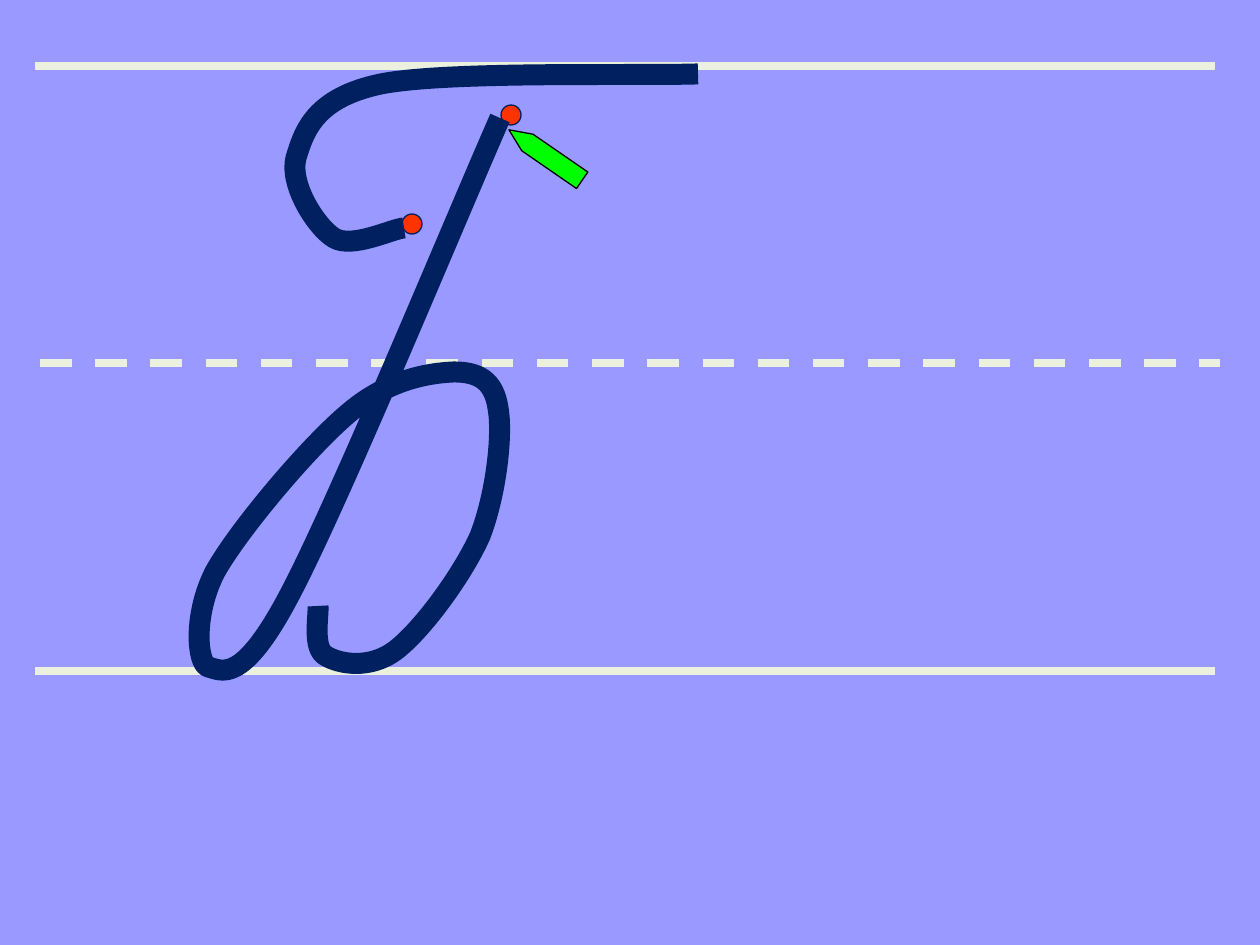
import lxml.etree
import pptx
import pptx.dml.color
import pptx.enum.dml
import pptx.enum.shapes
import pptx.oxml.ns
import pptx.util

RGBColor = pptx.dml.color.RGBColor
BACKGROUND = RGBColor(0x99, 0x99, 0xFF)
RULE = RGBColor(0xEB, 0xF1, 0xDE)
INK = RGBColor(0x00, 0x20, 0x60)
DOT = RGBColor(0xFF, 0x33, 0x00)
PENCIL = RGBColor(0x00, 0xFF, 0x00)
BLACK = RGBColor(0x00, 0x00, 0x00)
EMU_PER_PX = 914400 / 126


def px(*lengths):
    return [round(length * EMU_PER_PX) for length in lengths]


def bend_segments(shape):
    """Turn each three straight segments into one cubic curve."""
    qn = pptx.oxml.ns.qn
    segments = list(shape._element.iter(qn("a:lnTo")))
    for index in range(0, len(segments), 3):
        curve = lxml.etree.Element(qn("a:cubicBezTo"))
        segments[index].addprevious(curve)
        for segment in segments[index:index + 3]:
            curve.append(segment[0])
            segment.getparent().remove(segment)


presentation = pptx.Presentation()
presentation.slide_width, presentation.slide_height = px(1260, 945)
slide = presentation.slides.add_slide(presentation.slide_layouts[6])
slide.background.fill.solid()
slide.background.fill.fore_color.rgb = BACKGROUND

# Ruled writing lines
ruling = slide.shapes.add_group_shape()
for left, y, dashed in ((35, 66, False), (40, 363, True), (35, 671, False)):
    rule = ruling.shapes.add_connector(
        pptx.enum.shapes.MSO_CONNECTOR.STRAIGHT, *px(left, y, left + 1180, y))
    rule.line.color.rgb = RULE
    rule.line.width = pptx.util.Pt(4.5)
    if dashed:
        rule.line.dash_style = pptx.enum.dml.MSO_LINE.DASH
    lxml.etree.SubElement(rule._element.spPr, pptx.oxml.ns.qn("a:effectLst"))

# Dots where each stroke of the letter begins
letter = slide.shapes.add_group_shape()
for left, top in ((501, 105), (402, 214)):
    dot = letter.shapes.add_shape(
        pptx.enum.shapes.MSO_SHAPE.FLOWCHART_CONNECTOR, *px(left, top, 20, 20))
    dot.shadow.inherit = False
    dot.fill.solid()
    dot.fill.fore_color.rgb = DOT
    dot.line.color.rgb = INK
    dot.line.width = pptx.util.Pt(0.75)

# Strokes of the letter: a start, then two controls and an end on each row
stem_and_bowl = [
    (318, 606),
    (319, 615), (312, 649), (326, 656),
    (339, 664), (370, 670), (396, 650),
    (422, 630), (462, 576), (480, 536),
    (496, 495), (503, 435), (498, 408),
    (494, 381), (479, 372), (454, 372),
    (430, 373), (389, 379), (350, 412),
    (310, 445), (239, 529), (215, 572),
    (193, 615), (197, 663), (208, 667),
    (221, 670), (241, 687), (289, 596),
    (338, 504), (456, 218), (500, 118),
]
top_flourish = [
    (404, 228),
    (392, 229), (352, 249), (334, 238),
    (316, 227), (289, 184), (296, 158),
    (304, 132), (314, 98), (381, 84),
    (447, 71), (633, 76), (698, 74),
]
for start, *points in (stem_and_bowl, top_flourish):
    builder = letter.shapes.build_freeform(*start, scale=EMU_PER_PX)
    builder.add_line_segments(points, close=False)
    stroke = builder.convert_to_shape()
    bend_segments(stroke)
    stroke.shadow.inherit = False
    stroke.fill.background()
    stroke.line.color.rgb = INK
    stroke.line.width = pptx.util.Pt(12)

# Pencil pointing at the start of the stem
pencil = slide.shapes.add_shape(
    pptx.enum.shapes.MSO_SHAPE.PENTAGON, *px(501, 145, 89, 20))
pencil.adjustments[0] = 1.12
pencil.rotation = 214.6
pencil.shadow.inherit = False
pencil.fill.solid()
pencil.fill.fore_color.rgb = PENCIL
pencil.line.color.rgb = BLACK
pencil.line.width = pptx.util.Pt(0.75)

presentation.save("out.pptx")
